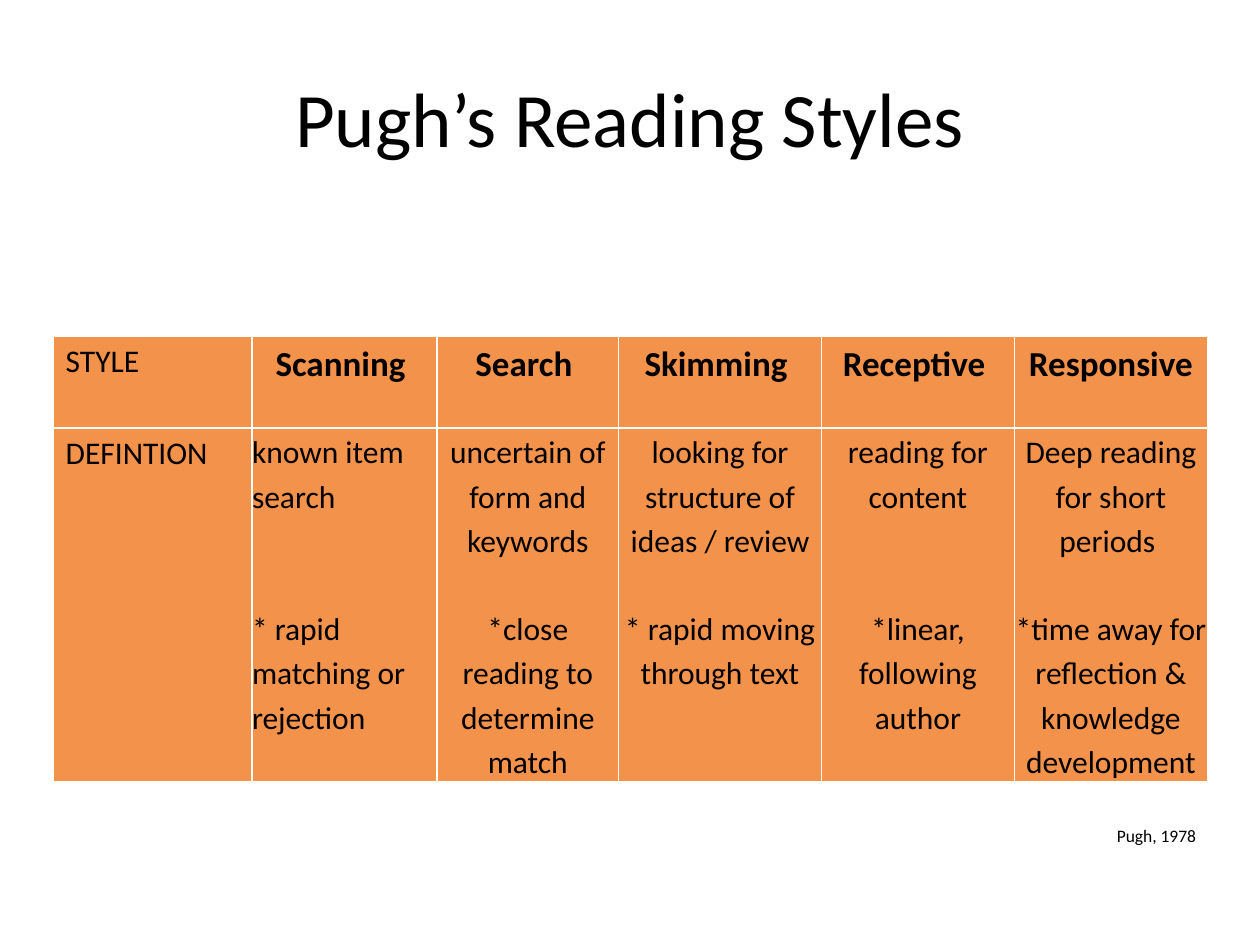
from lxml.etree import SubElement
from pptx import Presentation
from pptx.dml.color import RGBColor
from pptx.enum.text import MSO_ANCHOR as Anchor, PP_ALIGN as Align
from pptx.oxml.ns import qn
from pptx.util import Cm, Pt

BLACK = RGBColor(0, 0, 0)
WHITE = RGBColor(255, 255, 255)
ORANGE = RGBColor(0xF3, 0x93, 0x4B)
LINE_HEIGHT = 25.25
COLUMN_WIDTHS = (4.01, 3.73, 3.66, 4.09, 3.89, 3.89)
ROW_HEIGHTS = (1.85, 7.12)
STYLES = (
    ("Scanning ", ("known item search", "* rapid matching or rejection"), 2, Align.LEFT),
    ("Search ", ("uncertain of form and keywords",
                 "*close reading to determine match"), 1, Align.CENTER),
    ("Skimming ", ("looking for structure of ideas / review",
                   "* rapid moving through text"), 1, Align.CENTER),
    ("Receptive ", ("reading for content", "*linear,\vfollowing author"), 2, Align.CENTER),
    ("Responsive", ("Deep reading for short periods ",
                    "*time away for reflection & knowledge", "development"), 1, Align.CENTER),
)


class ReadingStylesPage:
    """Draws styled text and table cells on one slide."""

    font = "Calibri"

    def __init__(self, page):
        self.page = page

    def set_text(self, frame, text, size, align, bold=False, spacing=None):
        frame.text = text
        frame.word_wrap = True
        for para in frame.paragraphs:
            para.alignment = align
            if spacing:
                para.line_spacing = spacing
            for span in para.runs:
                span.font.name = self.font
                span.font.size = Pt(size)
                span.font.bold = bold
                span.font.color.rgb = BLACK

    def text(self, left, top, width, height, text, size, align, anchor=Anchor.TOP):
        box = self.page.shapes.add_textbox(Cm(left), Cm(top), Cm(width), Cm(height))
        self.set_text(box.text_frame, text, size, align)
        box.text_frame.vertical_anchor = anchor

    def table(self, left, top, widths, heights):
        frame = self.page.shapes.add_table(len(heights), len(widths), Cm(left), Cm(top),
                                           Cm(sum(widths)), Cm(sum(heights)))
        table = frame.table
        for column, width in zip(table.columns, widths):
            column.width = Cm(width)
        for row, height in zip(table.rows, heights):
            row.height = Cm(height)
        for cell in table.iter_cells():
            self.border(cell)
            cell.fill.solid()
            cell.fill.fore_color.rgb = ORANGE
        return table

    def border(self, cell):
        properties = cell._tc.get_or_add_tcPr()
        for side in ("a:lnL", "a:lnR", "a:lnT", "a:lnB"):
            line = SubElement(properties, qn(side), w=str(Pt(1)))
            fill = SubElement(line, qn("a:solidFill"))
            SubElement(fill, qn("a:srgbClr"), val=str(WHITE))

    def label(self, cell, text):
        self.set_text(cell.text_frame, text, 18, Align.LEFT)

    def entry(self, cell, text, size, align, bold=False, gap_lines=0):
        cell.margin_left = cell.margin_right = cell.margin_top = cell.margin_bottom = 0
        self.set_text(cell.text_frame, text, size, align, bold, 1.15)
        if gap_lines:
            cell.text_frame.paragraphs[1].space_before = Pt(gap_lines * LINE_HEIGHT)


def main():
    deck = Presentation()
    deck.slide_width, deck.slide_height = Cm(25.4), Cm(19.05)
    slide = ReadingStylesPage(deck.slides.add_slide(deck.slide_layouts[6]))
    slide.text(1.27, 0.76, 22.86, 3.18, "Pugh’s Reading Styles", 44, Align.CENTER, Anchor.MIDDLE)

    table = slide.table(1.07, 6.78, COLUMN_WIDTHS, ROW_HEIGHTS)
    slide.label(table.cell(0, 0), "STYLE")
    slide.label(table.cell(1, 0), "DEFINTION")
    for column, (name, definition, gap_lines, align) in enumerate(STYLES, start=1):
        slide.entry(table.cell(0, column), name, 20, Align.CENTER, bold=True)
        slide.entry(table.cell(1, column), "\n".join(definition), 18, align, gap_lines=gap_lines)

    slide.text(20.12, 16.51, 4.24, 0.69, "Pugh, 1978", 10, Align.RIGHT)
    deck.save("out.pptx")


if __name__ == "__main__":
    main()
